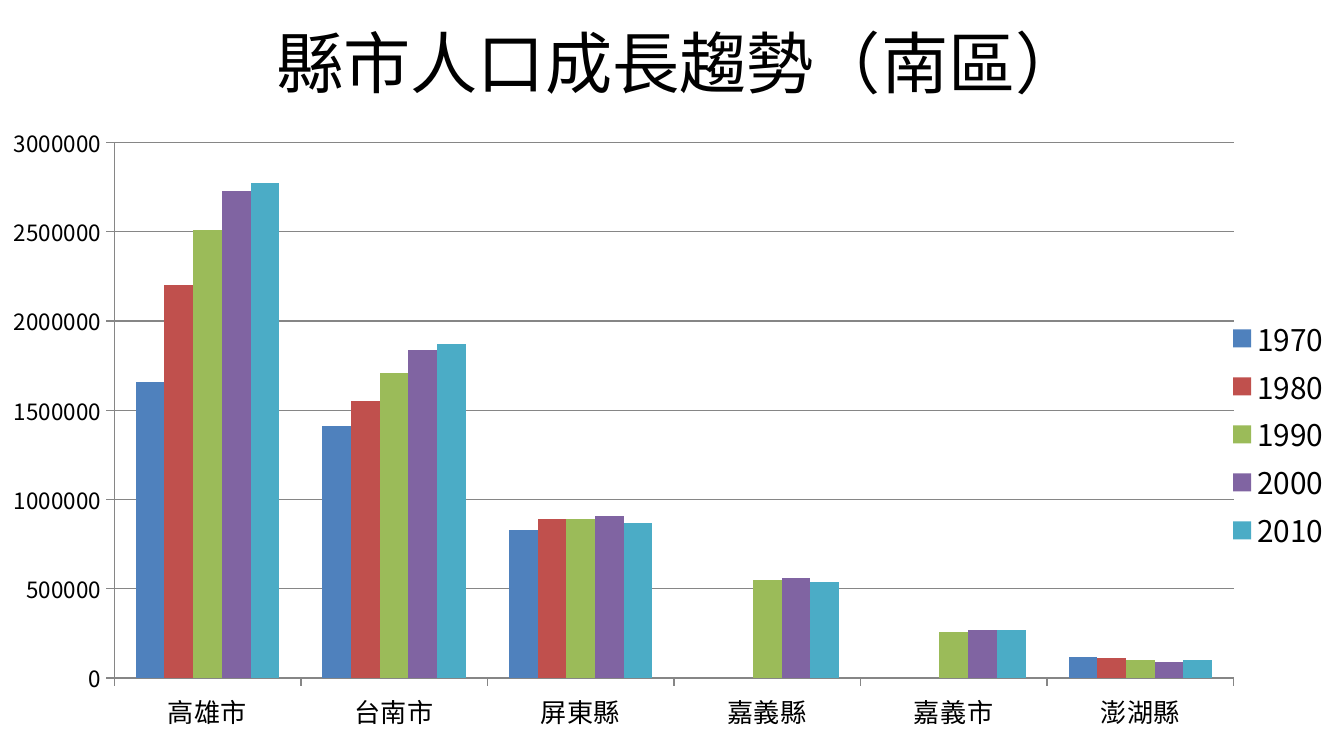
import pptx
import pptx.chart.data
import pptx.dml.color
import pptx.enum.chart
import pptx.enum.text
import pptx.oxml
import pptx.oxml.ns
import pptx.util

Inches, Pt = pptx.util.Inches, pptx.util.Pt
RGBColor = pptx.dml.color.RGBColor
FACE = "Noto Sans CJK SC"
BLACK = RGBColor(0x00, 0x00, 0x00)
GRAY = RGBColor(0x86, 0x86, 0x86)

# Content
TITLE = " 縣市人口成長趨勢（南區）"
CITIES = ["高雄市", "台南市", "屏東縣", "嘉義縣", "嘉義市", "澎湖縣"]
YEARS = [
    ("1970", RGBColor(0x4F, 0x81, 0xBD), [1660000, 1410000, 830000, None, None, 120000]),
    ("1980", RGBColor(0xC0, 0x50, 0x4D), [2200000, 1550000, 890000, None, None, 110000]),
    ("1990", RGBColor(0x9B, 0xBB, 0x59), [2510000, 1710000, 890000, 550000, 260000, 100000]),
    ("2000", RGBColor(0x80, 0x64, 0xA2), [2730000, 1840000, 910000, 560000, 270000, 90000]),
    ("2010", RGBColor(0x4B, 0xAC, 0xC6), [2770000, 1870000, 870000, 540000, 270000, 100000]),
]
PLOT = {"x": 0.085, "y": 0.046, "w": 0.833, "h": 0.833}


def style(font, size, face=FACE):
    font.size, font.name = Pt(size), face
    font.color.rgb = BLACK


def write(slide, text, box, size, align):
    frame = slide.shapes.add_textbox(*map(Inches, box)).text_frame
    frame.word_wrap = True
    frame.vertical_anchor = pptx.enum.text.MSO_ANCHOR.MIDDLE
    para = frame.paragraphs[0]
    para.alignment = align
    run = para.add_run()
    run.text = text
    style(run.font, size)


def place(chart, spots):
    """Fix the inner plot area, in fractions of the chart."""
    area = chart.plots[0]._element.getparent()
    for old in area.findall(pptx.oxml.ns.qn("c:layout")):
        area.remove(old)
    modes = "".join(f'<c:{k}Mode val="edge"/>' for k in "xy")
    sizes = "".join(f'<c:{k} val="{v}"/>' for k, v in spots.items())
    area.insert(0, pptx.oxml.parse_xml(
        f'<c:layout {pptx.oxml.ns.nsdecls("c")}><c:manualLayout>'
        f'<c:layoutTarget val="inner"/>{modes}{sizes}'
        '</c:manualLayout></c:layout>'))


# Widescreen slide, 16 to 9
deck = pptx.Presentation()
deck.slide_width = Inches(10)
deck.slide_height = deck.slide_width * 9 // 16
slide = deck.slides.add_slide(deck.slide_layouts[6])

# Title
write(slide, TITLE, (0.5, 0.07, 9, 0.78), size=36,
      align=pptx.enum.text.PP_ALIGN.CENTER)

# Chart, down to the foot of the slide
data = pptx.chart.data.CategoryChartData()
data.categories = CITIES
for year, _, counts in YEARS:
    data.add_series(year, counts)
kinds = pptx.enum.chart
top = Inches(0.84)
chart = slide.shapes.add_chart(
    kinds.XL_CHART_TYPE.COLUMN_CLUSTERED,
    0, top, deck.slide_width, deck.slide_height - top, data).chart
style(chart.font, 18, "Calibri")
chart.has_title = False
place(chart, PLOT)

# Bars
plot = chart.plots[0]
plot.gap_width, plot.overlap = 150, 0
plot.vary_by_categories = False
for bars, (_, color, _) in zip(plot.series, YEARS):
    bars.format.fill.solid()
    bars.format.fill.fore_color.rgb = color
    bars.invert_if_negative = False

# Axes
for axis, size in ((chart.category_axis, 14), (chart.value_axis, 12)):
    style(axis.tick_labels.font, size)
    axis.major_tick_mark = kinds.XL_TICK_MARK.OUTSIDE
    axis.minor_tick_mark = kinds.XL_TICK_MARK.NONE
    axis.format.line.color.rgb = GRAY
    axis.format.line.width = Pt(0.75)
scale = chart.value_axis
scale.minimum_scale, scale.maximum_scale, scale.major_unit = 0, 3000000, 500000
scale.has_major_gridlines = True
scale.major_gridlines.format.line.color.rgb = GRAY
scale.major_gridlines.format.line.width = Pt(0.75)

# Legend
chart.has_legend = True
chart.legend.position = kinds.XL_LEGEND_POSITION.RIGHT
chart.legend.include_in_layout = False
style(chart.legend.font, 16)

deck.save("out.pptx")
